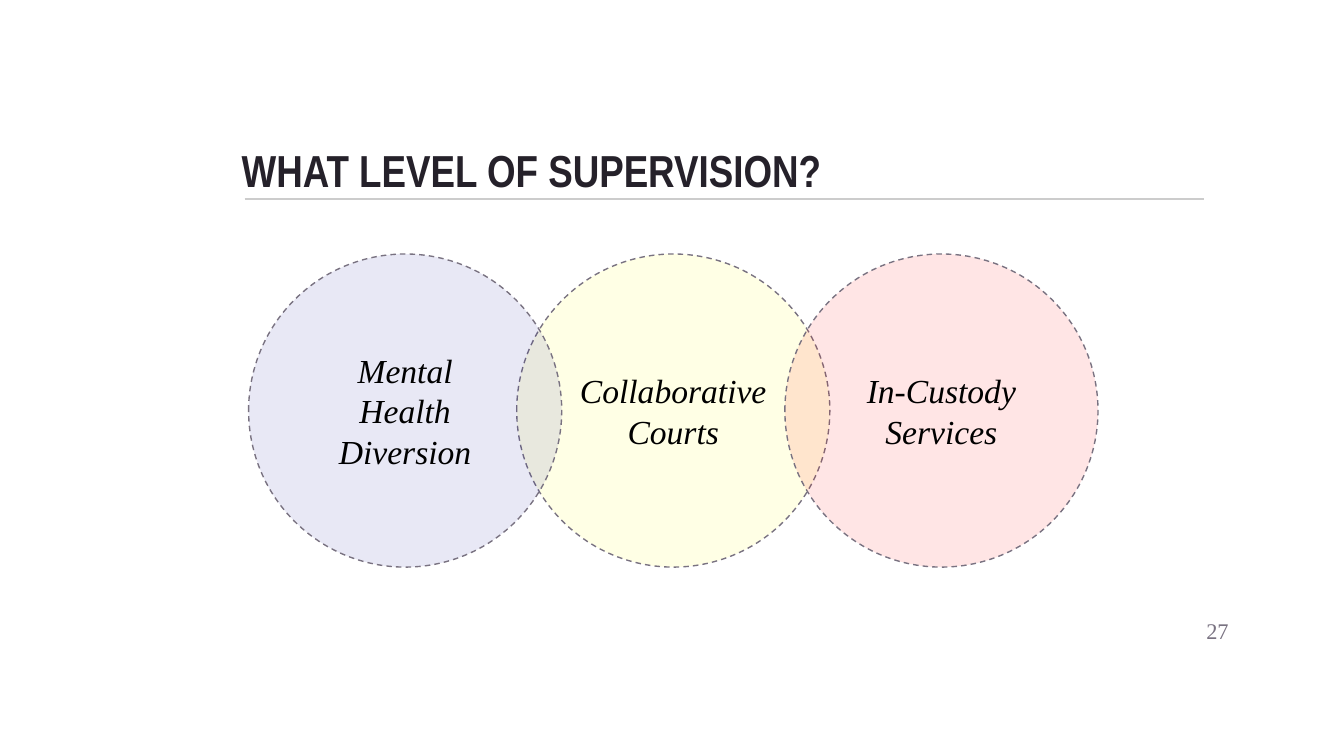
from lxml import etree
from pptx import Presentation
from pptx.dml.color import RGBColor
from pptx.enum.dml import MSO_LINE
from pptx.enum.shapes import MSO_CONNECTOR, MSO_SHAPE
from pptx.enum.text import MSO_ANCHOR, PP_ALIGN
from pptx.oxml.ns import qn
from pptx.util import Inches, Pt

STRAIGHT = MSO_CONNECTOR.STRAIGHT
OVAL = MSO_SHAPE.OVAL
DASH = MSO_LINE.DASH
MIDDLE, BOTTOM = MSO_ANCHOR.MIDDLE, MSO_ANCHOR.BOTTOM
LEFT, CENTER, RIGHT = PP_ALIGN.LEFT, PP_ALIGN.CENTER, PP_ALIGN.RIGHT

SERIF, NARROW = "Times New Roman", "Arial Narrow"
GREY = "797281"

SLIDE_WIDTH = Inches(10)
SLIDE_HEIGHT = SLIDE_WIDTH * 9 // 16

DIAMETER = 2.33
FIRST_LEFT, LAST_LEFT, CIRCLE_TOP = 1.85, 5.84, 1.89
COLUMN_STEP = (LAST_LEFT - FIRST_LEFT) / 2
# Column, label, fill colour, opacity in percent; listed from back to front.
CIRCLES = [
    (1, "Collaborative Courts", "FFFF00", 10),
    (0, "Mental Health Diversion", "000099", 9),
    (2, "In-Custody Services", "FF0000", 10),
]


def rgb(value):
    return RGBColor.from_string(value)


def write_text(shape, text, font_name, size, color, align, anchor,
               inset=0.1, bold=False, italic=False):
    frame = shape.text_frame
    frame.word_wrap = True
    frame.vertical_anchor = anchor
    frame.margin_left = frame.margin_right = Inches(inset)
    frame.margin_top = frame.margin_bottom = Inches(0.1)
    paragraph = frame.paragraphs[0]
    paragraph.alignment = align
    run = paragraph.add_run()
    run.text = text
    font = run.font
    font.name, font.size = font_name, Pt(size)
    font.bold, font.italic = bold, italic
    font.color.rgb = rgb(color)


def add_text_box(slide, left, top, width, height, text, **style):
    shape = slide.shapes.add_textbox(
        Inches(left), Inches(top), Inches(width), Inches(height))
    write_text(shape, text, **style)


def add_rule(slide, left, right, y):
    """Add the thin horizontal line under the title."""
    rule = slide.shapes.add_connector(
        STRAIGHT, Inches(left), Inches(y), Inches(right), Inches(y))
    rule.line.color.rgb = rgb("CCCCCC")
    rule.line.width = Pt(0.75)
    etree.SubElement(rule._element.spPr, qn("a:effectLst"))


def add_circle(slide, column, label, color, opacity):
    left = FIRST_LEFT + column * COLUMN_STEP
    circle = slide.shapes.add_shape(
        OVAL, Inches(left), Inches(CIRCLE_TOP), Inches(DIAMETER), Inches(DIAMETER))
    circle.shadow.inherit = False
    circle.fill.solid()
    circle.fill.fore_color.rgb = rgb(color)
    fill_color = circle._element.spPr.find(qn("a:solidFill")).find(qn("a:srgbClr"))
    etree.SubElement(fill_color, qn("a:alpha"), val=str(opacity * 1000))
    circle.line.color.rgb = rgb(GREY)
    circle.line.width = Pt(0.75)
    circle.line.dash_style = DASH
    write_text(circle, label, SERIF, 18, "000000", CENTER, MIDDLE,
               inset=0.11, italic=True)


def main():
    presentation = Presentation()
    presentation.slide_width = SLIDE_WIDTH
    presentation.slide_height = SLIDE_HEIGHT
    slide = presentation.slides.add_slide(presentation.slide_layouts[6])

    add_rule(slide, 1.82, 8.96, 1.48)
    add_text_box(slide, 1.7, 0.79, 7.24, 0.77, "WHAT LEVEL OF SUPERVISION?",
                 font_name=NARROW, size=24, color="25212A",
                 align=LEFT, anchor=BOTTOM, bold=True)
    for circle in CIRCLES:
        add_circle(slide, *circle)
    add_text_box(slide, 8.64, 4.48, 0.6, 0.43, "27",
                 font_name=SERIF, size=12, color=GREY,
                 align=RIGHT, anchor=MIDDLE)

    presentation.save("out.pptx")


if __name__ == "__main__":
    main()
